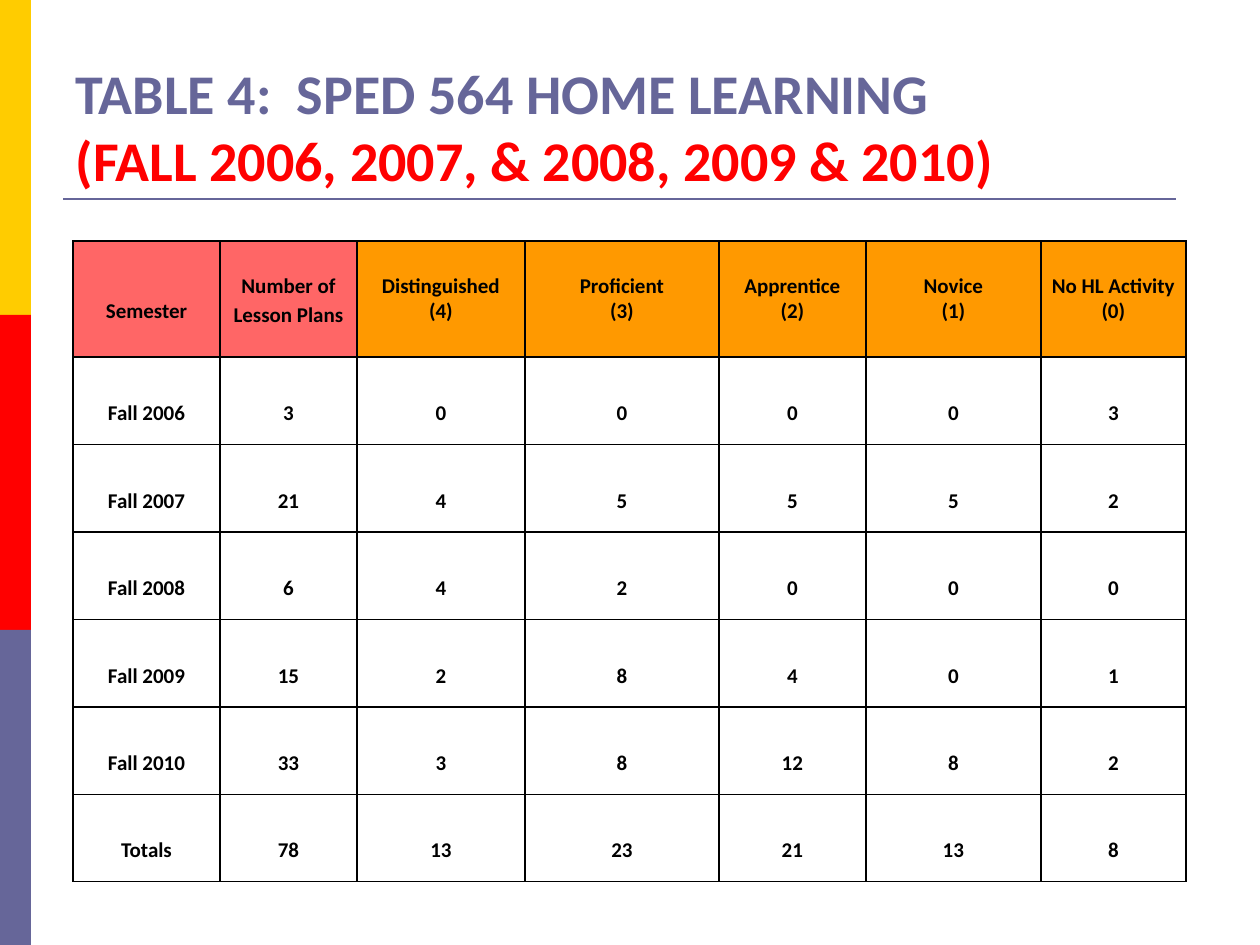
from lxml import etree
from pptx import Presentation
from pptx import util as u
from pptx.dml.color import RGBColor
from pptx.enum import shapes, text
from pptx.oxml.ns import qn

YELLOW = RGBColor(0xFF, 0xCC, 0x00)
RED = RGBColor(0xFF, 0x00, 0x00)
SLATE = RGBColor(0x66, 0x66, 0x99)
CORAL = RGBColor(0xFF, 0x66, 0x66)
ORANGE = RGBColor(0xFF, 0x99, 0x00)
WHITE = RGBColor(0xFF, 0xFF, 0xFF)
BLACK = RGBColor(0x00, 0x00, 0x00)
FONT = "Calibri"

# Content
TITLE = [("TABLE 4:  SPED 564 HOME LEARNING", SLATE),
         ("(FALL 2006, 2007, & 2008, 2009 & 2010)", RED)]
# Each header: lines, fill, line spacing, space after
HEADERS = [
    (["Semester"], CORAL, 2.0, 10),
    (["Number of Lesson Plans"], CORAL, 1.15, 10),
    (["Distinguished", "(4)"], ORANGE, 1.0, 0),
    (["Proficient", "(3)"], ORANGE, 1.0, 0),
    (["Apprentice", "(2)"], ORANGE, 1.0, 0),
    (["Novice", "(1)"], ORANGE, 1.0, 0),
    (["No HL Activity", "(0)"], ORANGE, 1.0, 0),
]
ROWS = [
    ("Fall 2006", 3, 0, 0, 0, 0, 3),
    ("Fall 2007", 21, 4, 5, 5, 5, 2),
    ("Fall 2008", 6, 4, 2, 0, 0, 0),
    ("Fall 2009", 15, 2, 8, 4, 0, 1),
    ("Fall 2010", 33, 3, 8, 12, 8, 2),
    ("Totals", 78, 13, 23, 21, 13, 8),
]

# Layout in px
PAGE_WIDTH, PAGE_HEIGHT = 1260, 945
BAR_WIDTH, BAR_HEIGHT = 31, 315
TABLE_LEFT, TABLE_TOP, TABLE_HEIGHT = 73, 241, 641
HEADER_HEIGHT = 116
COLUMN_WIDTHS = [147, 137, 168, 194, 147, 175, 145]


def px(value):
    return u.Emu(round(value * 914400 / 126))


def add_span(para, content, size, color):
    span = para.add_run()
    span.text = content
    span.font.name = FONT
    span.font.size = u.Pt(size)
    span.font.bold = True
    span.font.color.rgb = color


def add_borders(cell):
    properties = cell._tc.get_or_add_tcPr()
    for side in ("lnL", "lnR", "lnT", "lnB"):
        line = etree.SubElement(properties, qn("a:" + side), w=str(u.Pt(1)))
        fill = etree.SubElement(line, qn("a:solidFill"))
        etree.SubElement(fill, qn("a:srgbClr"), val=str(BLACK))


def fill_cell(cell, lines, color, spacing, after):
    add_borders(cell)
    cell.fill.solid()
    cell.fill.fore_color.rgb = color
    cell.vertical_anchor = text.MSO_ANCHOR.MIDDLE
    cell.margin_left = cell.margin_right = u.Inches(0.05)
    cell.margin_top = cell.margin_bottom = 0
    frame = cell.text_frame
    for index, content in enumerate(lines):
        para = frame.add_paragraph() if index else frame.paragraphs[0]
        para.alignment = text.PP_ALIGN.CENTER
        para.line_spacing = spacing
        para.space_after = u.Pt(after)
        add_span(para, content, 12, BLACK)


deck = Presentation()
deck.slide_width, deck.slide_height = px(PAGE_WIDTH), px(PAGE_HEIGHT)
page = deck.slides.add_slide(deck.slide_layouts[5])

# Side bars
for index, color in enumerate((YELLOW, RED, SLATE)):
    bar = page.shapes.add_shape(shapes.MSO_SHAPE.RECTANGLE, 0, px(index * BAR_HEIGHT),
                                px(BAR_WIDTH), px(BAR_HEIGHT))
    bar.shadow.inherit = False
    bar.fill.solid()
    bar.fill.fore_color.rgb = color
    bar.line.fill.background()

# Rule under the title
rule = page.shapes.add_connector(shapes.MSO_CONNECTOR.STRAIGHT,
                                 px(63), px(199), px(1176), px(199))
rule.line.color.rgb = SLATE
rule.line.width = u.Pt(1.5)
etree.SubElement(rule._element.spPr, qn("a:effectLst"))

# Title
title = page.shapes.title
title.left, title.top, title.width, title.height = px(63), px(73), px(1134), px(105)
frame = title.text_frame
frame.auto_size = text.MSO_AUTO_SIZE.NONE
frame.word_wrap = True
frame.vertical_anchor = text.MSO_ANCHOR.MIDDLE
para = frame.paragraphs[0]
para.alignment = text.PP_ALIGN.LEFT
for index, (content, color) in enumerate(TITLE):
    if index:
        para.add_line_break()
    add_span(para, content, 32, color)

# Table
table = page.shapes.add_table(len(ROWS) + 1, len(HEADERS), px(TABLE_LEFT), px(TABLE_TOP),
                              px(sum(COLUMN_WIDTHS)), px(TABLE_HEIGHT)).table
table.first_row = table.horz_banding = False
for column, width in zip(table.columns, COLUMN_WIDTHS):
    column.width = px(width)
for index, row in enumerate(table.rows):
    row.height = px((TABLE_HEIGHT - HEADER_HEIGHT) / len(ROWS) if index else HEADER_HEIGHT)

for column, header in enumerate(HEADERS):
    fill_cell(table.cell(0, column), *header)
for row, values in enumerate(ROWS, start=1):
    for column, value in enumerate(values):
        fill_cell(table.cell(row, column), [str(value)], WHITE, 2.0, 10)

deck.save("out.pptx")
